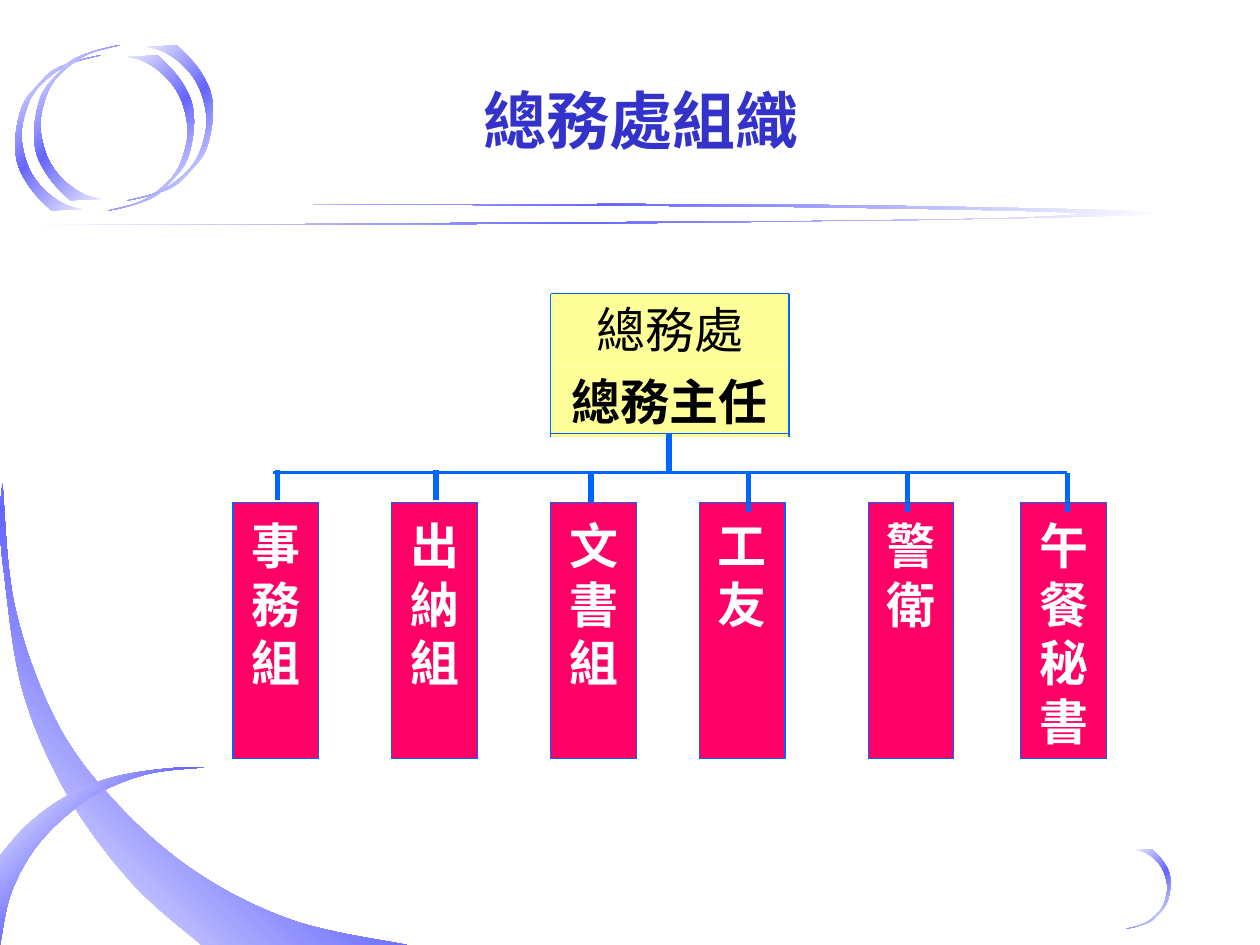
from copy import deepcopy
from pptx import Presentation, util as u
from pptx.dml.color import RGBColor
from pptx.enum import shapes as s, text as t
from pptx.oxml import ns
from pptx.oxml.xmlchemy import OxmlElement

WHITE, BLACK = RGBColor(255, 255, 255), RGBColor(0, 0, 0)
VIOLET, NAVY = RGBColor(0x66, 0x66, 0xFF), RGBColor(0x33, 0x33, 0xCC)
BLUE, PINK = RGBColor(0, 0x66, 0xFF), RGBColor(0xFF, 0, 0x66)
CREAM = RGBColor(0xFF, 0xFF, 0x99)

deck = Presentation()
deck.slide_width, deck.slide_height = u.Inches(10), u.Inches(7.5)
CELL = deck.slide_width // 10  # square grid, 10 columns by 7.5 rows
slide = deck.slides.add_slide(deck.slide_layouts[5])
parts = slide.shapes


def grid(*vals):
    return [round(v * CELL) for v in vals]


def bend(art, edges):
    """Turn the straight sides along each edge into smooth curves."""
    lines = iter(art._element.findall(".//" + ns.qn("a:lnTo")))
    left, top = art.left, art.top
    for n, edge in enumerate(edges):
        if n and edge[0] != edges[0][-1]:
            next(lines)  # the straight tip between two edges
        ends = [edge[0], *edge, edge[-1]]
        for a, b, c, d in zip(ends, ends[1:], ends[2:], ends[3:]):
            knots = ([q + (r - p) / 6 for p, q, r in zip(a, b, c)],
                     [q - (r - p) / 6 for p, q, r in zip(b, c, d)], c)
            arc = OxmlElement("a:cubicBezTo")
            for knot in knots:
                x, y = grid(*knot)
                dot = OxmlElement("a:pt")
                dot.set("x", str(x - left))
                dot.set("y", str(y - top))
                arc.append(dot)
            line = next(lines)
            line.getparent().replace(line, arc)


# Outlines of the ornaments: an outer and an inner edge each
ring = (
    [(0.4, 1.68), (0.3, 1.58), (0.21, 1.46), (0.14, 1.31), (0.12, 1.15),
     (0.14, 0.97), (0.19, 0.81), (0.3, 0.67), (0.41, 0.56), (0.57, 0.49),
     (0.72, 0.45), (0.78, 0.44)],
    [(0.78, 0.44), (0.66, 0.47), (0.54, 0.51), (0.41, 0.59), (0.28, 0.72),
     (0.21, 0.86), (0.17, 1.05), (0.19, 1.23), (0.25, 1.39), (0.36, 1.53),
     (0.5, 1.63), (0.63, 1.67)])
swoosh = (
    [(2.48, 1.62), (3.8, 1.62), (5.48, 1.62), (6.79, 1.63), (8.01, 1.65),
     (8.84, 1.67), (9.16, 1.69), (8.91, 1.71), (8.16, 1.73), (6.84, 1.75),
     (5.27, 1.77), (3.25, 1.78), (1.28, 1.78), (0.28, 1.78)],
    [(0.41, 1.78), (2.05, 1.78), (3.65, 1.77), (5.4, 1.76), (7.02, 1.75),
     (8.01, 1.73), (8.54, 1.7), (8.29, 1.68), (7.39, 1.66), (5.97, 1.64),
     (4.17, 1.63), (2.48, 1.62)])
sweep = (
    [(1.6, 7.5), (1.04, 7), (0.53, 6.3), (0.18, 5.48), (0.03, 4.53),
     (0, 4.1), (0.02, 3.84)],
    [(0.02, 3.84), (0.12, 4.82), (0.45, 5.73), (0.93, 6.38), (1.57, 6.93),
     (2.34, 7.31), (3.23, 7.5)])
leaf = (
    [(0, 6.79), (0.22, 6.54), (0.52, 6.32), (0.88, 6.17), (1.3, 6.1), (1.6, 6.09)],
    [(1.6, 6.09), (1.17, 6.14), (0.78, 6.29), (0.49, 6.5), (0.25, 6.77),
     (0.08, 7.11), (0, 7.5)])

# Ornaments: edges, place, turn, gradient angle
for edges, place, turn, angle in (
        (ring, (0.12, 0.44, 0.68, 1.23), 0, 315),
        (ring, (0.86, 0.44, 0.68, 1.23), 180, 315),
        (swoosh, (0.28, 1.62, 8.9, 0.16), 0, 315),
        (ring, (8.94, 6.74, 0.35, 0.63), 180, 315),
        (sweep, (0, 3.84, 3.23, 3.66), 0, 45),
        (ring, (0.27, 0.36, 0.68, 1.23), 0, 315),
        (ring, (1.01, 0.36, 0.68, 1.23), 180, 315),
        (leaf, (0, 6.09, 1.62, 1.41), 0, 315)):
    first, last = edges
    joint = first[-1] == last[0]
    pts = [grid(*pt) for pt in first + last[joint:]]
    pen = parts.build_freeform(*pts[0])
    pen.add_line_segments(pts[1:], close=True)
    art = pen.convert_to_shape()
    bend(art, edges)
    art.left, art.top, art.width, art.height = grid(*place)
    art.rotation = turn
    art.shadow.inherit = False
    art.line.fill.background()
    art.fill.gradient()
    art.fill.gradient_angle = angle
    stops = art._element.spPr.find(".//" + ns.qn("a:gsLst"))
    mid = deepcopy(stops[0])
    mid.set("pos", "50000")
    stops.insert(1, mid)
    for stop, tint in zip(art.fill.gradient_stops, (WHITE, VIOLET, WHITE)):
        stop.color.rgb = tint

# Title
head = parts.title
head.left, head.top, head.width, head.height = grid(3.74, 0.6, 2.91, 0.7)
labels = [(head, "總務處組織", 36, True, NAVY, t.PP_ALIGN.LEFT, 0.05)]

# Boxes: the office and its head, then the six units
TOP, BUS, TALL, WIDE = 3.99, 3.75, 2.03, 0.68
rows = [("總務主任", (4.37, 2.9, 1.89, 0.57), True, CREAM, BLACK, 0.05),
        ("總務處", (4.37, 2.33, 1.89, 0.57), False, CREAM, BLACK, 0.05)]
rows += [(word, (x, TOP, WIDE, TALL), True, PINK, WHITE, 0.1) for word, x in (
    ("出納組", 3.11), ("文書組", 4.37), ("事務組", 1.85),
    ("工友", 5.55), ("警衛", 6.89), ("午餐秘書", 8.1))]
for word, place, bold, fill, ink, gap in rows:
    box = parts.add_shape(s.MSO_SHAPE.RECTANGLE, *grid(*place))
    box.shadow.inherit = False
    box.fill.solid()
    box.fill.fore_color.rgb = fill
    if fill == PINK:
        box.line.color.rgb, box.line.width = BLUE, u.Pt(0.75)
    else:
        box.line.fill.background()
    labels.append((box, word, 28, bold, ink, t.PP_ALIGN.CENTER, gap))

# Wording
for shape, word, size, bold, ink, side, gap in labels:
    frame = shape.text_frame
    frame.text = word
    for key, val in {"word_wrap": True, "margin_top": u.Inches(gap),
                     "vertical_anchor": t.MSO_ANCHOR.TOP}.items():
        setattr(frame, key, val)
    para = frame.paragraphs[0]
    para.alignment = side
    for key, val in {"name": "Arial", "size": u.Pt(size), "bold": bold}.items():
        setattr(para.font, key, val)
    para.font.color.rgb = ink

# Lines: ends and weight; frame, bus, stem, then drops
wires = [((4.37, 2.33, 6.26, 2.33), 1), ((4.37, 3.44, 6.26, 3.44), 1),
         ((4.37, 2.33, 4.37, 3.47), 1), ((6.26, 2.33, 6.26, 3.47), 1),
         ((2.17, BUS, 5.95, BUS), 2.25), ((5.94, BUS, 8.47, BUS), 2.25),
         ((5.31, 3.44, 5.31, BUS), 3)]
wires += [((x, top, x, end), 3) for x, top, end in (
    (2.2, 3.73, 3.97), (3.46, 3.73, 3.97), (4.69, BUS, TOP),
    (5.94, BUS, 4.06), (7.2, BUS, 4.06), (8.47, BUS, 4.06))]
for ends, weight in wires:
    wire = parts.add_connector(s.MSO_CONNECTOR.STRAIGHT, *grid(*ends))
    wire.line.color.rgb, wire.line.width = BLUE, u.Pt(weight)
    wire._element.spPr.append(OxmlElement("a:effectLst"))

deck.save("out.pptx")
